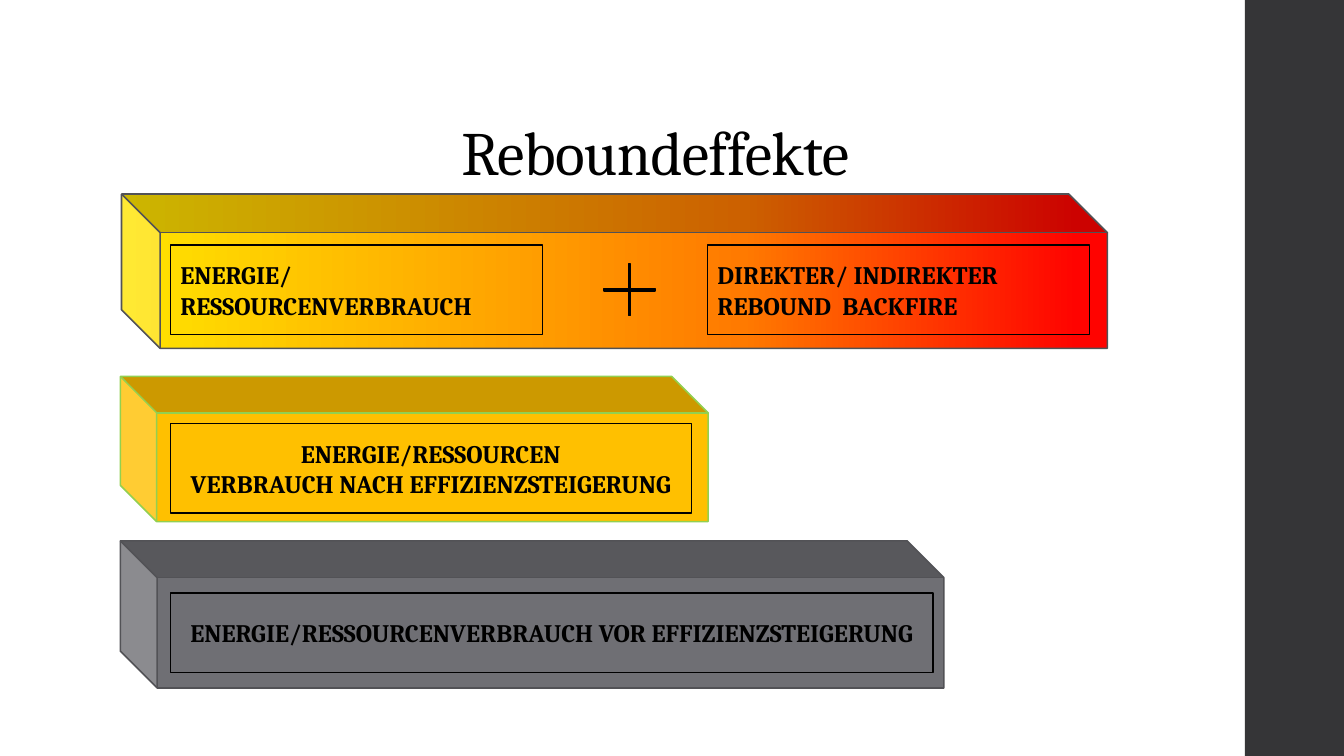
"""Builds the slide on rebound effects: three cube bars with labels and a plus sign."""
from copy import deepcopy

from pptx import Presentation
from pptx.dml.color import RGBColor
from pptx.enum.shapes import MSO_SHAPE
from pptx.enum.text import MSO_ANCHOR, PP_ALIGN
from pptx.util import Pt

RECTANGLE, CUBE, PLUS = MSO_SHAPE.RECTANGLE, MSO_SHAPE.CUBE, MSO_SHAPE.CROSS
LEFT, CENTER = PP_ALIGN.LEFT, PP_ALIGN.CENTER
MIDDLE, BOTTOM = MSO_ANCHOR.MIDDLE, MSO_ANCHOR.BOTTOM

COLORS = {
    "black": "000000",
    "sidebar": "353537",
    "edge": "525256",
    "before": "6F6F74",
    "after": "FFC000",
    "after_edge": "92D050",
    "yellow": "FFE400",
    "orange": "FF7A00",
    "red": "FF0300",
}
REBOUND_STOPS = [(0, "yellow"), (0.63, "orange"), (0.97, "red")]
TITLE_FONT = {"name": "Cambria", "size": Pt(44), "bold": False}
LABEL_FONT = {"name": "Cambria", "size": Pt(18), "bold": True}
LABEL_LEFT = 121.7


def rgb(color):
    """Return the named colour."""
    return RGBColor.from_string(COLORS[color])


def add_figure(slide, preset, box, fill=None, edge=None):
    """Add a preset shape with an optional plain fill and outline."""
    figure = slide.shapes.add_shape(preset, *map(Pt, box))
    figure.shadow.inherit = False
    if fill:
        figure.fill.solid()
        figure.fill.fore_color.rgb = rgb(fill)
    else:
        figure.fill.background()
    if edge:
        figure.line.color.rgb = rgb(edge)
        figure.line.width = Pt(1.1)
    else:
        figure.line.fill.background()
    return figure


def add_bar(slide, left, top, width, height, fill, edge):
    """Add a cube turned on its side so that it covers the given area."""
    shift = (width - height) / 2
    bar = add_figure(slide, CUBE, (left + shift, top - shift, height, width), fill, edge)
    bar.rotation = 270
    return bar


def blend(bar, stops):
    """Fill a bar with a gradient that runs along its length."""
    bar.fill.gradient()
    bar.fill.gradient_angle = 270
    first = bar.fill.gradient_stops[0]._gs
    first.addnext(deepcopy(first))
    for stop, (position, color) in zip(bar.fill.gradient_stops, stops):
        stop.position = position
        stop.color.rgb = rgb(color)


def write(frame, lines, font, align, anchor):
    """Write one paragraph per line with the given font and alignment."""
    frame.word_wrap = True
    frame.vertical_anchor = anchor
    frame.text = lines[0]
    for line in lines[1:]:
        frame.add_paragraph().text = line
    for paragraph in frame.paragraphs:
        paragraph.alignment = align
        for run in paragraph.runs:
            run.font.color.rgb = rgb("black")
            for attribute, value in font.items():
                setattr(run.font, attribute, value)


def add_label(slide, box, lines, align):
    """Add an outlined label."""
    label = add_figure(slide, RECTANGLE, box, edge="black")
    write(label.text_frame, lines, LABEL_FONT, align, MIDDLE)


def add_title(slide, title):
    """Add the slide title with slightly tightened letters."""
    frame = slide.shapes.add_textbox(Pt(282.2), Pt(33.8), Pt(371.5), Pt(104.4)).text_frame
    write(frame, [title], TITLE_FONT, CENTER, BOTTOM)
    heading = frame.paragraphs[0]
    heading.line_spacing = 0.9
    heading.runs[0].font._element.set("spc", "-50")


def main():
    """Build and save the slide."""
    deck = Presentation()
    deck.slide_width, deck.slide_height = Pt(960), Pt(540)
    slide = deck.slides.add_slide(deck.slide_layouts[6])

    add_figure(slide, RECTANGLE, (889.2, 0, 70.8, 540), "sidebar")
    add_title(slide, "Reboundeffekte")

    rebound = add_bar(slide, 86.8, 138.6, 704.2, 110.2, "yellow", "edge")
    blend(rebound, REBOUND_STOPS)
    add_bar(slide, 86, 268.9, 419.8, 103.7, "after", "after_edge")
    add_bar(slide, 86, 386.3, 588.2, 105.1, "before", "edge")

    add_label(slide, (LABEL_LEFT, 423.4, 545, 56.9),
              ["ENERGIE/RESSOURCENVERBRAUCH VOR EFFIZIENZSTEIGERUNG"], CENTER)
    add_label(slide, (LABEL_LEFT, 302.4, 372.2, 64.1),
              ["ENERGIE/RESSOURCEN\vVERBRAUCH NACH EFFIZIENZSTEIGERUNG"], CENTER)
    add_label(slide, (LABEL_LEFT, 175, 265.7, 64.1),
              ["ENERGIE/", "RESSOURCENVERBRAUCH"], LEFT)
    plus = add_figure(slide, PLUS, (431.3, 188.6, 36.7, 36.7), "black", "black")
    plus.adjustments[0] = 0.48
    add_label(slide, (505.4, 175, 272.9, 64.1),
              ["DIREKTER/ INDIREKTER REBOUND  BACKFIRE"], LEFT)

    deck.save("out.pptx")


if __name__ == "__main__":
    main()
